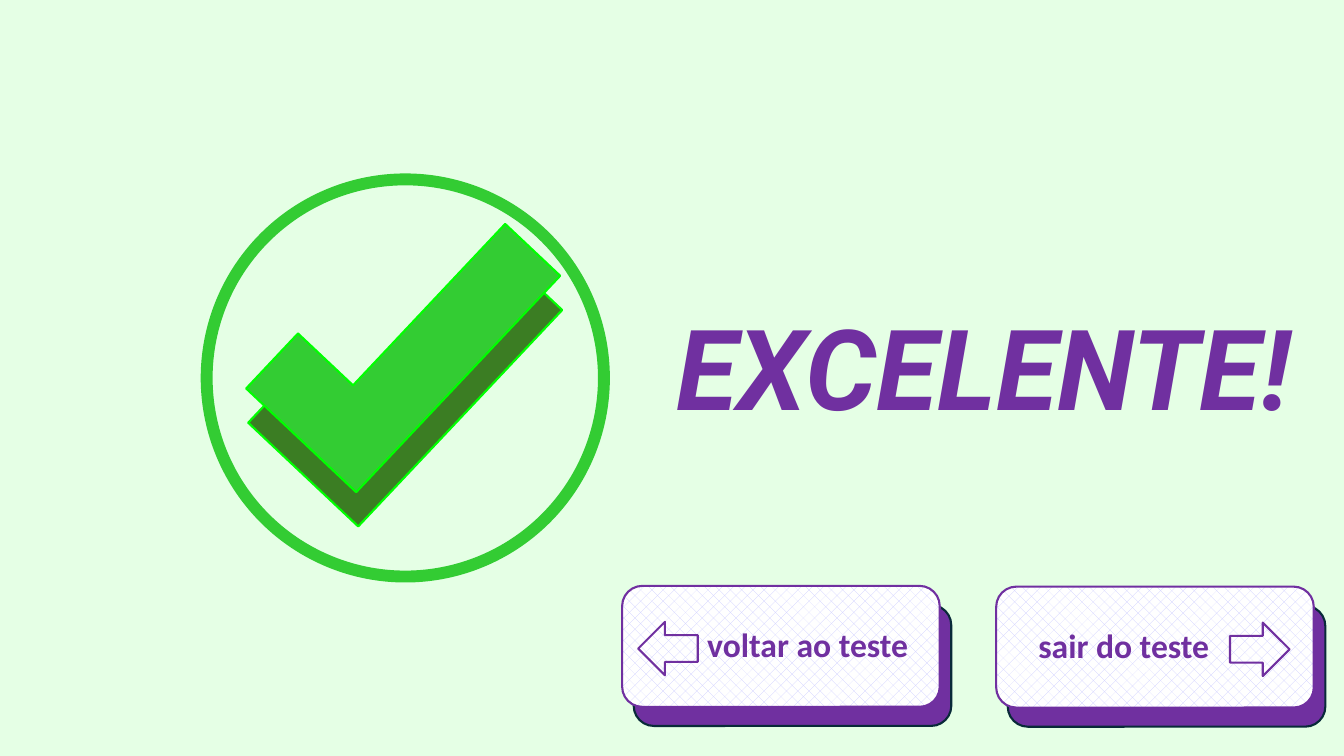
from dataclasses import dataclass

from lxml.etree import SubElement
from pptx import Presentation
from pptx.dml.color import RGBColor
from pptx.enum.dml import MSO_PATTERN
from pptx.enum.shapes import MSO_SHAPE
from pptx.enum.text import MSO_ANCHOR, MSO_AUTO_SIZE, PP_ALIGN
from pptx.oxml.ns import qn
from pptx.shapes.autoshape import Shape
from pptx.slide import Slide
from pptx.text.text import _Paragraph
from pptx.util import Emu, Inches, Pt

SLIDE_WIDTH, SLIDE_HEIGHT = Inches(13.33), Inches(7.5)


@dataclass(frozen=True)
class Theme:
    background: str = "E5FFE5"
    purple: str = "7030A0"
    navy: str = "092A39"
    green: str = "33CC33"
    dark_green: str = "3B7D23"
    bright_green: str = "00FF00"
    lilac: str = "CCCCFF"
    white: str = "FFFFFF"
    title_font: str = "Roboto"
    button_font: str = "Calibri"
    title_size: float = 80
    button_size: float = 24
    thin: float = 1.5
    ring: float = 8.5


THEME = Theme()


@dataclass(frozen=True)
class Area:
    """Place and size in percent of the slide's width and height."""
    left: float
    top: float
    width: float
    height: float

    def emu(self) -> tuple[Emu, Emu, Emu, Emu]:
        return (Emu(round(SLIDE_WIDTH * self.left / 100)),
                Emu(round(SLIDE_HEIGHT * self.top / 100)),
                Emu(round(SLIDE_WIDTH * self.width / 100)),
                Emu(round(SLIDE_HEIGHT * self.height / 100)))

    def inner(self, right: float, down: float, width: float, height: float) -> "Area":
        return Area(self.left + right, self.top + down, width, height)


@dataclass(frozen=True)
class Button:
    label: str
    area: Area
    arrow: MSO_SHAPE
    arrow_shift: float
    align: PP_ALIGN
    text_inset: float


BUTTONS = (
    Button("voltar ao teste", Area(46.29, 77.5, 23.63, 16),
           MSO_SHAPE.LEFT_ARROW, 1.2, PP_ALIGN.CENTER, 0.63),
    Button("sair do teste", Area(74.12, 77.6, 23.63, 16),
           MSO_SHAPE.RIGHT_ARROW, 17.4, PP_ALIGN.LEFT, 0.36),
)
RING = Area(15.38, 23.73, 29.56, 52.53)
TICK = Area(24.38, 24.27, 11.25, 39.33)
TICK_SHADOW = TICK.inner(0.15, 4.53, TICK.width, TICK.height)
TITLE = Area(48.84, 38.8, 48.76, 19.33)


def color(code: str) -> RGBColor:
    return RGBColor.from_string(code)


def add_outlined(slide: Slide, kind: MSO_SHAPE, area: Area, line: str,
                 fill: str | None = None, weight: float = THEME.thin) -> Shape:
    shape = slide.shapes.add_shape(kind, *area.emu())
    shape.shadow.inherit = False
    if fill is None:
        shape.fill.background()
    else:
        shape.fill.solid()
        shape.fill.fore_color.rgb = color(fill)
    shape.line.color.rgb = color(line)
    shape.line.width = Pt(weight)
    return shape


def style_text(paragraph: _Paragraph, font_name: str, size: float) -> None:
    font = paragraph.font
    font.name, font.size, font.bold = font_name, Pt(size), True
    font.color.rgb = color(THEME.purple)


def add_tick(slide: Slide, area: Area, fill: str) -> None:
    tick = add_outlined(slide, MSO_SHAPE.CORNER, area, THEME.bright_green, fill)
    tick.rotation = 43.3
    tick._element.spPr.find(qn("a:xfrm")).set("flipH", "1")


def outline_letters(paragraph: _Paragraph) -> None:
    letters = paragraph._p.get_or_add_pPr().get_or_add_defRPr()
    line = SubElement(letters, qn("a:ln"), w=str(Pt(1)))
    fill = SubElement(line, qn("a:solidFill"))
    SubElement(fill, qn("a:srgbClr"), val=THEME.purple)
    letters.insert(0, line)


def add_title(slide: Slide) -> None:
    frame = slide.shapes.add_textbox(*TITLE.emu()).text_frame
    frame.word_wrap = False
    frame.auto_size = MSO_AUTO_SIZE.SHAPE_TO_FIT_TEXT
    title = frame.paragraphs[0]
    title.text = "EXCELENTE!"
    title.alignment = PP_ALIGN.CENTER
    style_text(title, THEME.title_font, THEME.title_size)
    title.font.italic = True
    outline_letters(title)


def add_button(slide: Slide, button: Button) -> None:
    area = button.area
    add_outlined(slide, MSO_SHAPE.ROUNDED_RECTANGLE,
                 area.inner(0.86, 2.53, area.width, area.height), THEME.navy, THEME.purple)
    face = add_outlined(slide, MSO_SHAPE.ROUNDED_RECTANGLE, area, THEME.purple)
    face.fill.patterned()
    face.fill.pattern = MSO_PATTERN.PERCENT_25
    face.fill.fore_color.rgb = color(THEME.lilac)
    face.fill.back_color.rgb = color(THEME.white)

    frame = face.text_frame
    frame.word_wrap = True
    frame.vertical_anchor = MSO_ANCHOR.MIDDLE
    frame.margin_left = Inches(button.text_inset)
    label = frame.paragraphs[0]
    label.text = button.label
    label.alignment = button.align
    label.line_spacing = 0.9
    label.space_before = Pt(10)
    style_text(label, THEME.button_font, THEME.button_size)

    add_outlined(slide, button.arrow, area.inner(button.arrow_shift, 4.75, 4.43, 7.07),
                 THEME.purple)


def main() -> None:
    presentation = Presentation()
    presentation.slide_width, presentation.slide_height = SLIDE_WIDTH, SLIDE_HEIGHT
    slide = presentation.slides.add_slide(presentation.slide_layouts[6])
    slide.background.fill.solid()
    slide.background.fill.fore_color.rgb = color(THEME.background)

    add_tick(slide, TICK_SHADOW, THEME.dark_green)
    add_outlined(slide, MSO_SHAPE.FLOWCHART_CONNECTOR, RING, THEME.green, weight=THEME.ring)
    add_tick(slide, TICK, THEME.green)
    add_title(slide)
    for button in BUTTONS:
        add_button(slide, button)
    presentation.save("out.pptx")


if __name__ == "__main__":
    main()
